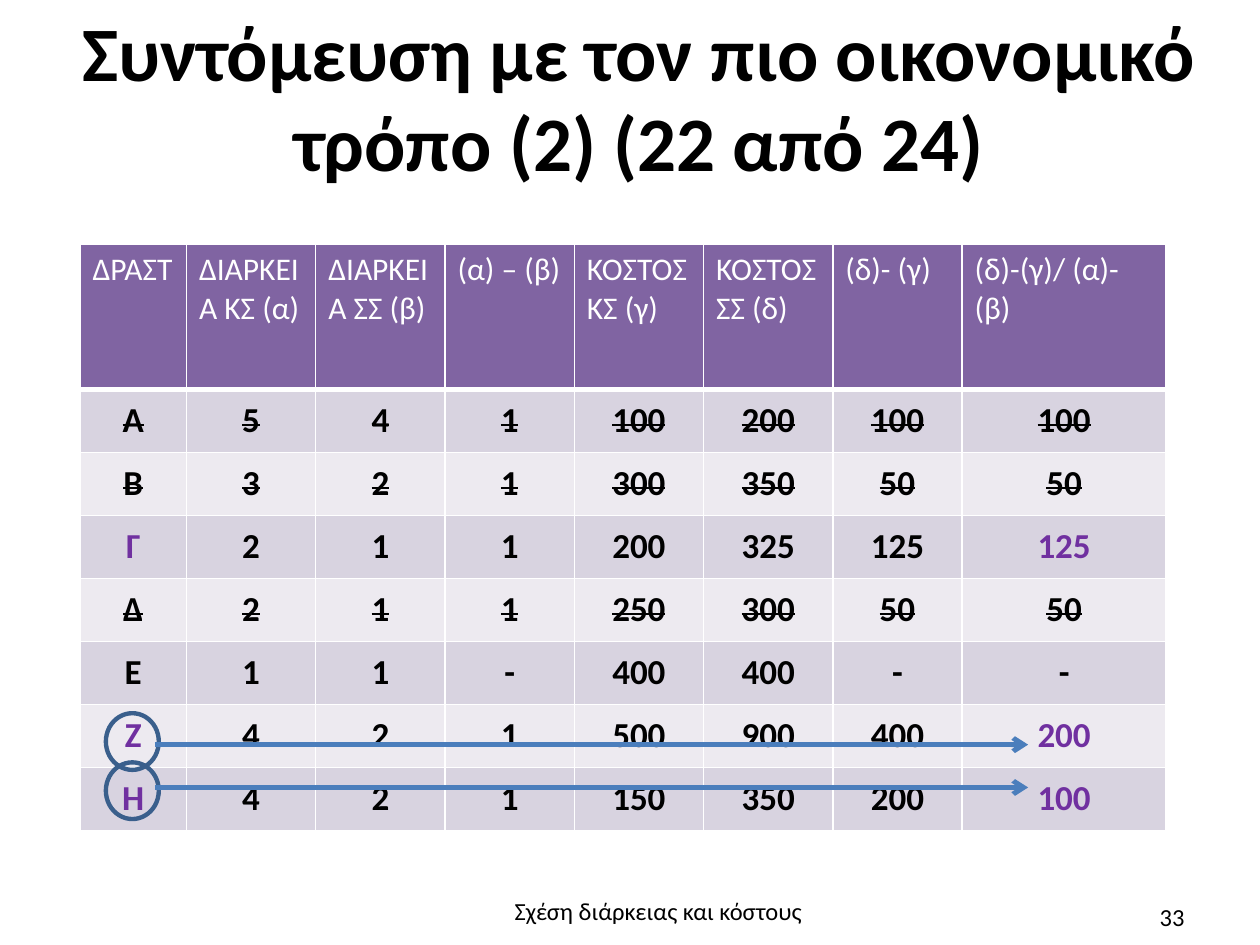
from dataclasses import dataclass

from lxml.etree import SubElement
from pptx import Presentation
from pptx.dml.color import RGBColor
from pptx.enum.shapes import MSO_CONNECTOR, MSO_SHAPE
from pptx.enum.text import MSO_ANCHOR as Anchor, MSO_AUTO_SIZE as AutoSize, PP_ALIGN as Align
from pptx.oxml.ns import qn
from pptx.util import Emu, Inches, Pt

FONT = "Calibri"
BLACK, WHITE, ACCENT = "000000", "FFFFFF", "7030A0"
HEADER_FILL, BANDS = "8064A2", ("D8D3E0", "EDEAF0")
RING_LINE, ARROW_LINE = "3A5F8C", "4B7EBC"

prs = Presentation()
prs.slide_width, prs.slide_height = Inches(10), Inches(7.5)


@dataclass(frozen=True)
class Area:
    """A place on the slide, in percent of its width and height."""
    left: float
    top: float
    width: float
    height: float

    def box(self) -> tuple[Emu, Emu, Emu, Emu]:
        return across(self.left), down(self.top), across(self.width), down(self.height)


@dataclass(frozen=True)
class Activity:
    values: tuple[str, ...]
    struck: bool = False
    critical: bool = False


@dataclass(frozen=True)
class Mark:
    """A ring around an activity, or the arrow to its cost."""
    ring_top: float
    arrow_level: float


def across(percent: float) -> Emu:
    return Emu(round(prs.slide_width * percent / 100))


def down(percent: float) -> Emu:
    return Emu(round(prs.slide_height * percent / 100))


def rgb(colour: str) -> RGBColor:
    return RGBColor.from_string(colour)


def style(paragraph, size: float, colour: str, align: Align, bold: bool = False) -> None:
    paragraph.alignment = align
    font = paragraph.font
    font.name, font.size, font.bold = FONT, Pt(size), bold
    font.color.rgb = rgb(colour)


def border(cell, bottom: float) -> None:
    properties = cell._tc.get_or_add_tcPr()
    sides = {"a:lnL": 1, "a:lnR": 1, "a:lnT": 1, "a:lnB": bottom}
    for index, (side, width) in enumerate(sides.items()):
        line = SubElement(properties, qn(side), w=str(Pt(width)))
        SubElement(SubElement(line, qn("a:solidFill")), qn("a:srgbClr"), val=WHITE)
        properties.insert(index, line)  # borders come before the fill


def fill_cell(cell, text: str, fill: str, bottom: float = 1):
    cell.text = text
    cell.fill.solid()
    cell.fill.fore_color.rgb = rgb(fill)
    border(cell, bottom)
    return cell.text_frame.paragraphs[0]


def add_label(slide, text: str, area: Area, align: Align) -> None:
    frame = slide.shapes.add_textbox(*area.box()).text_frame
    frame.word_wrap = True
    frame.text = text
    style(frame.paragraphs[0], 14, BLACK, align)


def add_ring(slide, area: Area) -> None:
    ring = slide.shapes.add_shape(MSO_SHAPE.OVAL, *area.box())
    ring.shadow.inherit = False
    ring.fill.background()
    ring.line.color.rgb = rgb(RING_LINE)
    ring.line.width = Pt(2.5)


def add_arrow(slide, start: float, end: float, level: float) -> None:
    arrow = slide.shapes.add_connector(
        MSO_CONNECTOR.STRAIGHT, across(start), down(level), across(end), down(level))
    arrow.line.color.rgb = rgb(ARROW_LINE)
    arrow.line.width = Pt(2.75)
    SubElement(arrow.line._get_or_add_ln(), qn("a:tailEnd"), type="arrow")
    SubElement(arrow._element.spPr, qn("a:effectLst"))


HEADINGS = ("ΔΡΑΣΤ", "ΔΙΑΡΚΕΙΑ ΚΣ (α)", "ΔΙΑΡΚΕΙΑ ΣΣ (β)", "(α) – (β)",
            "ΚΟΣΤΟΣ ΚΣ (γ)", "ΚΟΣΤΟΣ ΣΣ (δ)", "(δ)- (γ)", "(δ)-(γ)/ (α)-(β)")
ACTIVITIES = (
    Activity(("Α", "5", "4", "1", "100", "200", "100", "100"), struck=True),
    Activity(("Β", "3", "2", "1", "300", "350", "50", "50"), struck=True),
    Activity(("Γ", "2", "1", "1", "200", "325", "125", "125"), critical=True),
    Activity(("Δ", "2", "1", "1", "250", "300", "50", "50"), struck=True),
    Activity(("Ε", "1", "1", "-", "400", "400", "-", "-")),
    Activity(("Ζ", "4", "2", "1", "500", "900", "400", "200"), critical=True),
    Activity(("Η", "4", "2", "1", "150", "350", "200", "100"), critical=True),
)
COLUMN_SHARES = (8.45, *[10.26] * 6, 16.2)
HEADER_SHARE, ROW_SHARE = 15.33, 6.67
MARKS = (Mark(75.47, 78.8), Mark(80.67, 83.33))


def add_cost_table(slide) -> None:
    area = Area(6.35, 25.87, sum(COLUMN_SHARES), HEADER_SHARE + ROW_SHARE * len(ACTIVITIES))
    table = slide.shapes.add_table(len(ACTIVITIES) + 1, len(HEADINGS), *area.box()).table
    for column, share in zip(table.columns, COLUMN_SHARES):
        column.width = across(share)
    for index, row in enumerate(table.rows):
        row.height = down(ROW_SHARE if index else HEADER_SHARE)

    for column, heading in enumerate(HEADINGS):
        style(fill_cell(table.cell(0, column), heading, HEADER_FILL, bottom=3),
              18, WHITE, Align.LEFT)
    for row, activity in enumerate(ACTIVITIES):
        for column, value in enumerate(activity.values):
            cell = table.cell(row + 1, column)
            paragraph = fill_cell(cell, value, BANDS[row % 2])
            cell.vertical_anchor = Anchor.MIDDLE
            at_edge = column in (0, len(HEADINGS) - 1)
            style(paragraph, 20, ACCENT if activity.critical and at_edge else BLACK,
                  Align.CENTER, bold=True)
            if activity.struck:
                paragraph.runs[0].font._element.set("strike", "sngStrike")


def main() -> None:
    slide = prs.slides.add_slide(prs.slide_layouts[5])

    # Title
    title = slide.shapes.title
    title.left, title.top, title.width, title.height = Area(5.1, 1.2, 91.3, 18.4).box()
    frame = title.text_frame
    frame.text = "Συντόμευση με τον πιο οικονομικό τρόπο (2) (22 από 24)"
    frame.word_wrap, frame.auto_size = True, AutoSize.NONE
    frame.vertical_anchor = Anchor.MIDDLE
    frame.margin_left = frame.margin_right = frame.margin_bottom = 0
    frame.margin_top = Inches(0.02)
    frame.paragraphs[0].line_spacing = 0.98
    style(frame.paragraphs[0], 44, BLACK, Align.CENTER, bold=True)

    # Durations and costs
    add_cost_table(slide)

    # Activities chosen for shortening
    for mark in MARKS:
        add_ring(slide, Area(8.4, mark.ring_top, 4.2, 6))
        add_arrow(slide, 12.3, 81.6, mark.arrow_level)

    # Footer and slide number
    add_label(slide, "Σχέση διάρκειας και κόστους", Area(34.8, 94.13, 34.9, 7.33), Align.CENTER)
    add_label(slide, "33", Area(71.7, 94.8, 23.3, 5.33), Align.RIGHT)

    prs.save("out.pptx")


if __name__ == "__main__":
    main()
